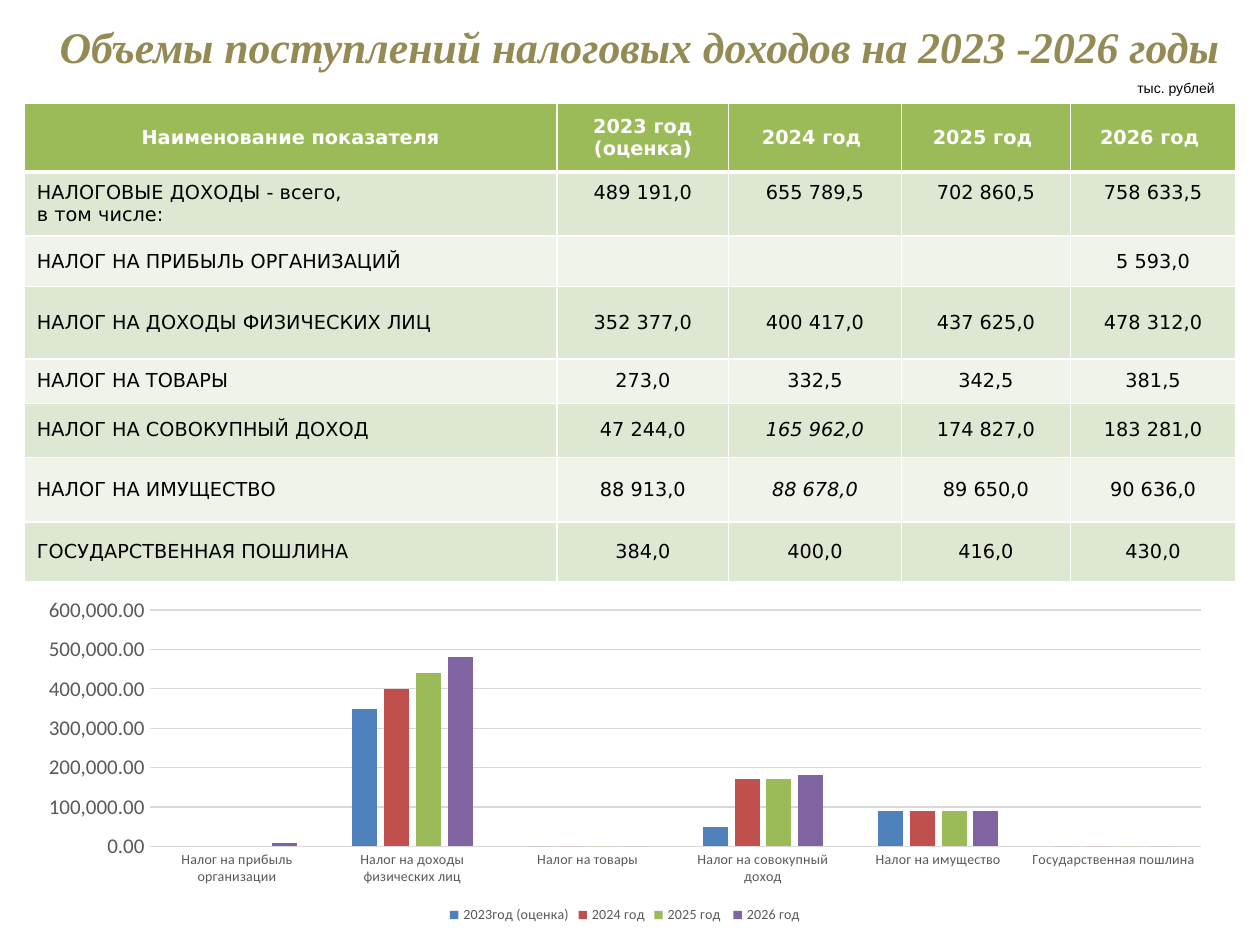
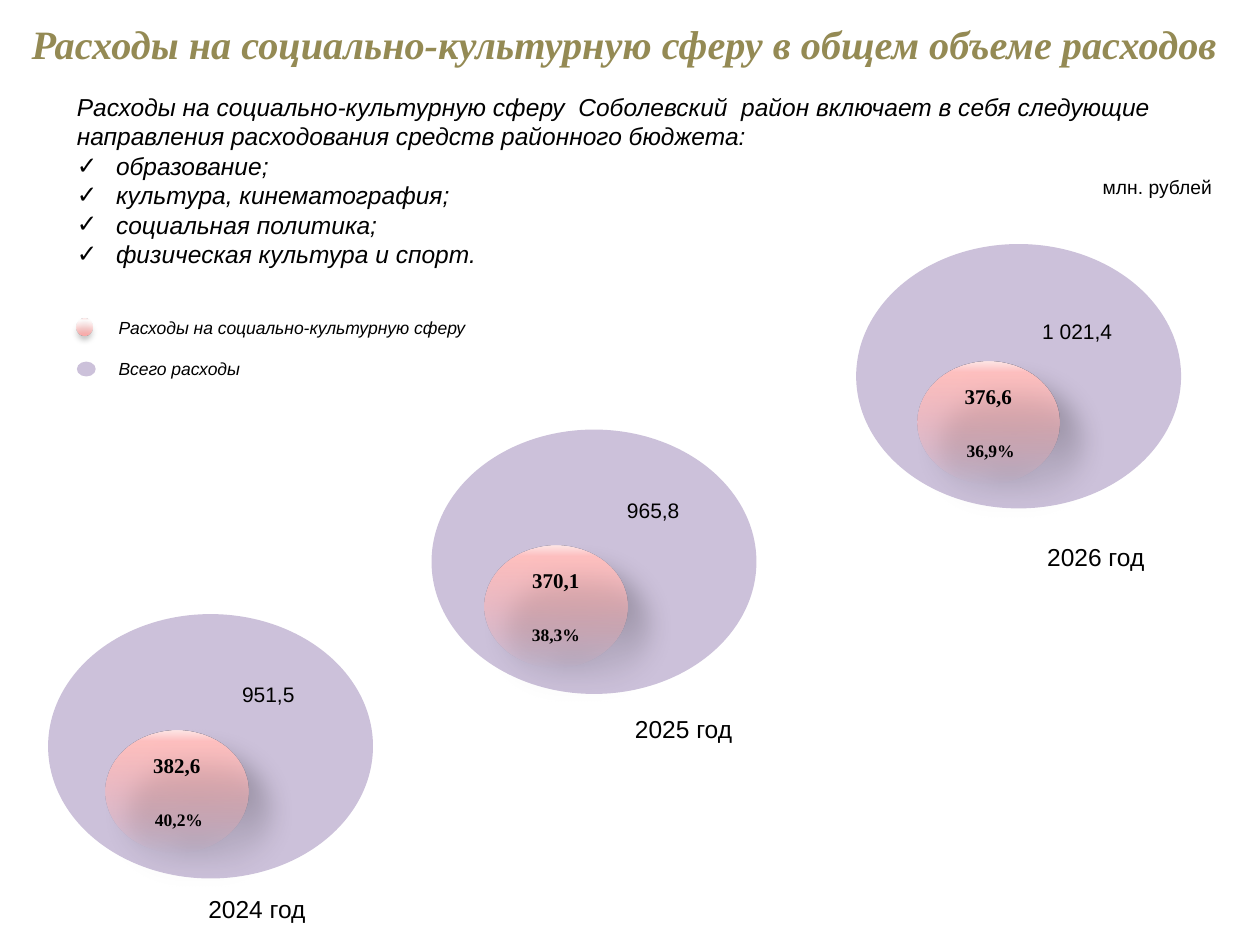
from lxml import etree
from pptx import Presentation
from pptx.chart.data import CategoryChartData
from pptx.dml.color import RGBColor
from pptx.enum.chart import XL_CHART_TYPE, XL_LEGEND_POSITION, XL_TICK_MARK
from pptx.enum.shapes import MSO_SHAPE
from pptx.enum.text import MSO_ANCHOR, PP_ALIGN
from pptx.oxml import parse_xml
from pptx.oxml.ns import nsdecls, qn
from pptx.util import Cm, Pt

LEFT, CENTER, RIGHT = PP_ALIGN.LEFT, PP_ALIGN.CENTER, PP_ALIGN.RIGHT
TOP, MIDDLE = MSO_ANCHOR.TOP, MSO_ANCHOR.MIDDLE
NO_TICK = XL_TICK_MARK.NONE

COLORS = {
    "title": "948A54", "text": "000000", "white": "FFFFFF",
    "header": "9BBB59", "band_dark": "DEE7D1", "band_light": "EFF3EA",
    "total": "CCC1DA", "share_low": "FFA6A5", "share_mid": "FFC0BF", "share_top": "FFE7E7",
    "chart_text": "595959", "grid": "D9D9D9",
}


def add_text(s, left, top, width, height, lines, size, align=LEFT, italic=False):
    box = s.shapes.add_textbox(Cm(left), Cm(top), Cm(width), Cm(height))
    tf = box.text_frame
    tf.word_wrap = True
    tf.text = lines
    for p in tf.paragraphs:
        p.alignment = align
        for r in p.runs:
            r.font.name, r.font.size, r.font.italic = "Arial", Pt(size), italic
            r.font.color.rgb = RGBColor.from_string(COLORS["text"])
    return tf


def add_ellipse(s, left, top, width, height, alphas=None, shadow=None):
    """Flat ellipse, or a glossy one when stop alphas (low, middle; %) and
    shadow (alpha %, blur pt, distance pt, angle) are given."""
    sp = s.shapes.add_shape(MSO_SHAPE.OVAL, Cm(left), Cm(top), Cm(width), Cm(height))
    sp.shadow.inherit = False
    sp.line.fill.background()
    if shadow is None:
        sp.fill.solid()
        sp.fill.fore_color.rgb = RGBColor.from_string(COLORS["total"])
        return sp
    sp_pr = sp._element.spPr
    stops = "".join(
        f'<a:gs pos="{pos * 1000}"><a:srgbClr val="{COLORS[color]}">'
        f'<a:alpha val="{alpha * 1000}"/></a:srgbClr></a:gs>'
        for pos, color, alpha in zip((0, 91, 100), ("share_low", "share_mid", "share_top"),
                                     (*alphas, 100)))
    sp_pr.insert(2, parse_xml(
        f'<a:gradFill {nsdecls("a")} rotWithShape="1"><a:gsLst>{stops}</a:gsLst>'
        '<a:lin ang="16200000" scaled="0"/></a:gradFill>'))
    alpha, blur, distance, angle = shadow
    sp_pr.find(qn("a:effectLst")).append(parse_xml(
        f'<a:outerShdw {nsdecls("a")} blurRad="{Pt(blur)}" dist="{Pt(distance)}" '
        f'dir="{angle * 60000}" algn="tl" rotWithShape="0"><a:srgbClr val="000000">'
        f'<a:alpha val="{alpha * 1000}"/></a:srgbClr></a:outerShdw>'))
    return sp


prs = Presentation()
prs.slide_width, prs.slide_height = Cm(25.4), Cm(19.05)

titles = [
    ("Объемы поступлений налоговых доходов на 2023 -2026 годы", 25, -2.3, -0.03, 28.4),
    ("Расходы на социально-культурную сферу в общем объеме расходов", 23, -1.8, -0.09, 26.82),
]
for text, size, left, top, width in titles:
    s = prs.slides.add_slide(prs.slide_layouts[5])
    sp = s.shapes.title
    sp.left, sp.top, sp.width, sp.height = Cm(left), Cm(top), Cm(width), Cm(1.93)
    tf = sp.text_frame
    tf.text = text
    tf.word_wrap = True
    tf.vertical_anchor = MIDDLE
    p = tf.paragraphs[0]
    p.alignment = CENTER
    p._p.get_or_add_pPr().set("marL", str(Cm(1.98)))
    font = p.runs[0].font
    font.name, font.size, font.bold, font.italic = "Times New Roman", Pt(size), True, True
    font.color.rgb = RGBColor.from_string(COLORS["title"])

tax_slide, spending_slide = prs.slides

# Tax revenue table
s = tax_slide
add_text(s, 21.2, 1.47, 3.54, 0.61, "тыс. рублей", 8, RIGHT)

header = ["Наименование показателя", "2023 год (оценка)", "2024 год ", "2025 год ", "2026 год "]
taxes = [
    ["НАЛОГОВЫЕ ДОХОДЫ - всего,\nв том числе:", "489 191,0", "655 789,5", "702 860,5", "758 633,5"],
    ["НАЛОГ НА ПРИБЫЛЬ ОРГАНИЗАЦИЙ", "", "", "", "5 593,0"],
    ["НАЛОГ НА ДОХОДЫ ФИЗИЧЕСКИХ ЛИЦ", "352 377,0", "400 417,0", "437 625,0", "478 312,0"],
    ["НАЛОГ НА ТОВАРЫ", "273,0", "332,5", "342,5", "381,5"],
    ["НАЛОГ НА СОВОКУПНЫЙ ДОХОД", "47 244,0", "165 962,0", "174 827,0", "183 281,0"],
    ["НАЛОГ НА ИМУЩЕСТВО", "88 913,0", "88 678,0", "89 650,0", "90 636,0"],
    ["ГОСУДАРСТВЕННАЯ ПОШЛИНА", "384,0", "400,0", "416,0", "430,0"],
]
italic_values = {"165 962,0", "88 678,0"}
col_widths = [10.74, 3.46, 3.48, 3.41, 3.33]
row_heights = [1.39, 1.29, 1.02, 1.46, 0.89, 1.09, 1.3, 1.2]

table = s.shapes.add_table(8, 5, Cm(0.49), Cm(2.08), Cm(24.42), Cm(9.64)).table
for column, width in zip(table.columns, col_widths):
    column.width = Cm(width)
for i, (values, height) in enumerate(zip([header] + taxes, row_heights)):
    table.rows[i].height = Cm(height)
    fill = "header" if i == 0 else "band_dark" if i % 2 else "band_light"
    for j, value in enumerate(values):
        cell = table.cell(i, j)
        cell.text = value
        cell.vertical_anchor = MIDDLE
        if i == 1 and j:
            cell.vertical_anchor = TOP
            cell.margin_top = Cm(0.19)
        tc_pr = cell._tc.get_or_add_tcPr()
        for side in ("lnL", "lnR", "lnT", "lnB"):
            thick = (i == 0 and side == "lnB") or (i == 1 and side == "lnT")
            ln = etree.SubElement(tc_pr, qn(f"a:{side}"), w=str(Pt(3 if thick else 1)))
            solid = etree.SubElement(ln, qn("a:solidFill"))
            etree.SubElement(solid, qn("a:srgbClr"), val=COLORS["white"])
        cell.fill.solid()
        cell.fill.fore_color.rgb = RGBColor.from_string(COLORS[fill])
        for p in cell.text_frame.paragraphs:
            p.alignment = CENTER if i == 0 or j else LEFT
            for r in p.runs or [p.add_run()]:
                r.font.name, r.font.size = "DejaVu Sans", Pt(11)
                r.font.bold, r.font.italic = i == 0, value in italic_values
                r.font.color.rgb = RGBColor.from_string(COLORS["text" if i else "white"])

# Tax revenue chart
chart_series = [
    ("2023год (оценка)", "4F81BD", [None, 350000, 0, 50000, 90000, 0]),
    ("2024 год", "C0504D", [None, 400000, 0, 170000, 90000, 0]),
    ("2025 год ", "9BBB59", [None, 440000, 0, 170000, 90000, 0]),
    ("2026 год", "8064A2", [10000, 480000, 0, 180000, 90000, 0]),
]
data = CategoryChartData(number_format="#,##0.00")
data.categories = ["Налог на прибыль организации", "Налог на доходы физических лиц",
                   "Налог на товары", "Налог на совокупный доход",
                   "Налог на имущество", "Государственная пошлина"]
for name, color, amounts in chart_series:
    data.add_series(name, amounts)
chart = s.shapes.add_chart(XL_CHART_TYPE.COLUMN_CLUSTERED, Cm(0.5), Cm(11.91),
                           Cm(24.2), Cm(6.81), data).chart
chart.has_title = False
chart.font.name, chart.font.size = "Calibri", Pt(10)
chart.has_legend = True
chart.legend.position = XL_LEGEND_POSITION.BOTTOM
chart.legend.include_in_layout = False

plot = chart.plots[0]
plot.gap_width, plot.overlap, plot.vary_by_categories = 219, -27, False
for series, (name, color, amounts) in zip(plot.series, chart_series):
    series.invert_if_negative = False
    series.format.fill.solid()
    series.format.fill.fore_color.rgb = RGBColor.from_string(color)

cat_axis, val_axis = chart.category_axis, chart.value_axis
cat_axis.major_tick_mark = val_axis.major_tick_mark = NO_TICK
val_axis.minimum_scale, val_axis.maximum_scale, val_axis.major_unit = 0, 600000, 100000
val_axis.tick_labels.number_format = "#,##0.00"
val_axis.tick_labels.number_format_is_linked = False
val_axis.format.line.fill.background()
for line in (cat_axis.format.line, val_axis.major_gridlines.format.line):
    line.width = Pt(0.75)
    line.color.rgb = RGBColor.from_string(COLORS["grid"])
for font, size in ((cat_axis.tick_labels.font, 8), (val_axis.tick_labels.font, 12),
                   (chart.legend.font, 8)):
    font.name, font.size = "Calibri", Pt(size)
    font.color.rgb = RGBColor.from_string(COLORS["chart_text"])

# Social and cultural spending
s = spending_slide
areas = ["образование;", "культура, кинематография;", "социальная политика;",
         "физическая культура и спорт."]
intro = ("Расходы на социально-культурную сферу  Соболевский  район включает в себя "
         "следующие направления расходования средств районного бюджета:")
tf = add_text(s, 1.3, 1.73, 23.4, 3.86, "\n".join([intro] + areas), 14, italic=True)
for p in tf.paragraphs[1:]:
    p_pr = p._p.get_or_add_pPr()
    p_pr.set("marL", str(Cm(0.79)))
    p_pr.set("indent", str(-Cm(0.79)))
    etree.SubElement(p_pr, qn("a:buFont"), typeface="DejaVu Sans")
    etree.SubElement(p_pr, qn("a:buChar"), char="✓")

add_text(s, 21.98, 3.4, 3.05, 0.74, "млн. рублей", 11)

add_ellipse(s, 1.54, 6.43, 0.32, 0.33, (100, 0), (32, 3.5, 2.2, 90))
add_ellipse(s, 1.55, 7.29, 0.38, 0.3)
add_text(s, 2.14, 6.26, 8, 0.69, "Расходы на социально-культурную сферу", 10, italic=True)
add_text(s, 2.14, 7.09, 4, 0.69, "Всего расходы", 10, italic=True)

# year, total, share, percent, then left/top of the total, share, total label and year label
years = [
    ("2024 год", "951,5", "382,6", " 40,2%", (0.97, 12.38), (2.13, 14.73), (4.63, 13.61), (3.95, 17.9)),
    ("2025 год", "965,8", "370,1", "38,3%", (8.7, 8.66), (9.77, 11), (12.39, 9.91), (12.55, 14.27)),
    ("2026 год", "1 021,4", "376,6", " 36,9%", (17.26, 4.92), (18.49, 7.29), (20.76, 6.3), (20.86, 10.8)),
]
for year, total, share, percent, total_at, share_at, label_at, year_at in years:
    add_ellipse(s, *total_at, 6.55, 5.33)
    sp = add_ellipse(s, *share_at, 2.87, 2.46, (0, 100), (30, 15, 18, 45))
    tf = sp.text_frame
    tf.text = f"{share}\n{percent}"
    tf.vertical_anchor = MIDDLE
    tf.paragraphs[1].space_before = Pt(18)
    for p, size in zip(tf.paragraphs, (12, 10)):
        p.alignment = CENTER
        font = p.runs[0].font
        font.name, font.size, font.bold = "Times New Roman", Pt(size), True
        font.color.rgb = RGBColor.from_string(COLORS["text"])
    add_text(s, *label_at, 2.24, 0.79, total, 12)
    add_text(s, *year_at, 2.97, 0.86, year, 14)

prs.save("out.pptx")
